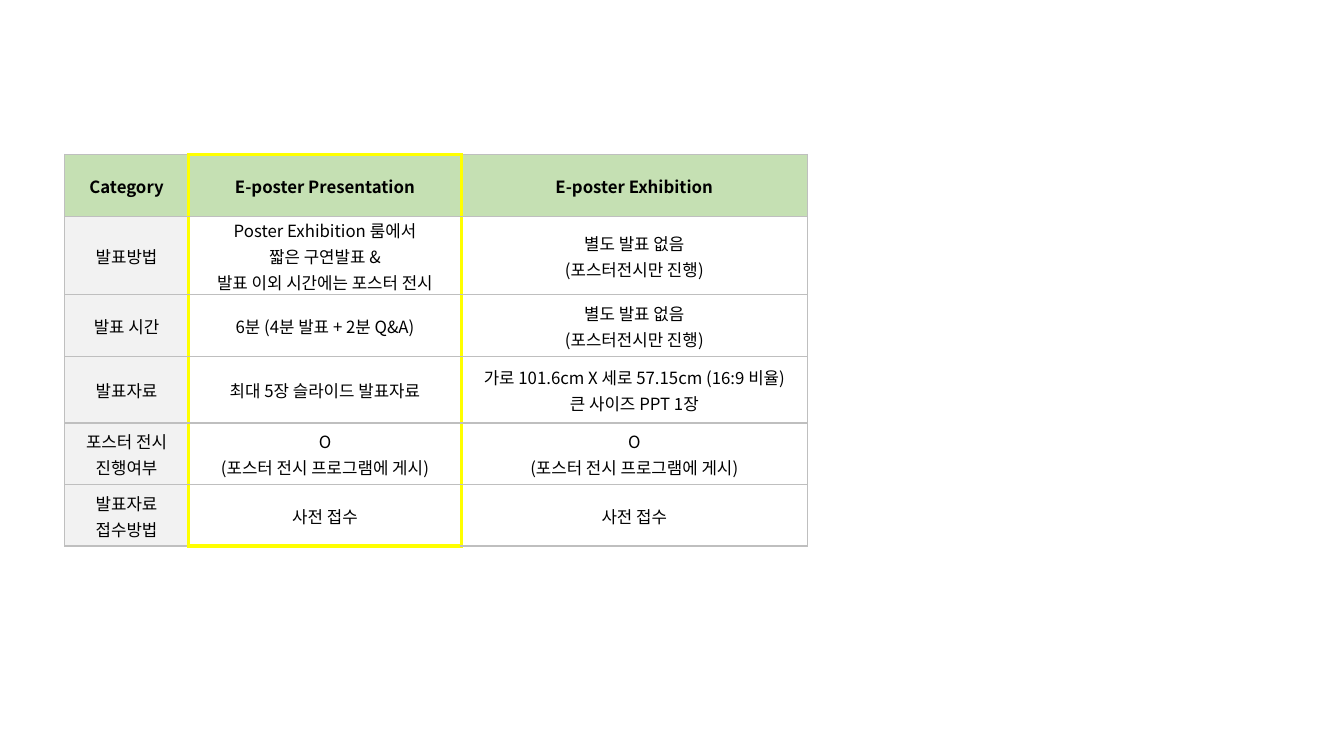
import pptx
import pptx.dml.color
import pptx.enum.text
import pptx.oxml
import pptx.oxml.ns
import pptx.util
from pptx.util import Cm

ROWS = [
    ("Category", "E-poster Presentation", "E-poster Exhibition"),
    ("발표방법",
     "Poster Exhibition 룸에서\n짧은 구연발표 &\n발표 이외 시간에는 포스터 전시",
     "별도 발표 없음\n(포스터전시만 진행)"),
    ("발표 시간", "6분 (4분 발표 + 2분 Q&A)", "별도 발표 없음\n(포스터전시만 진행)"),
    ("발표자료", "최대 5장 슬라이드 발표자료",
     "가로 101.6cm X 세로 57.15cm (16:9 비율)\n큰 사이즈 PPT 1장"),
    ("포스터 전시\n진행여부", "O\n(포스터 전시 프로그램에 게시)",
     "O\n(포스터 전시 프로그램에 게시)"),
    ("발표자료\n접수방법", "사전 접수", "사전 접수"),
]
COLUMN_WIDTHS = [3.12, 6.88, 8.71]
ROW_HEIGHTS = [1.57, 1.7, 1.55, 1.68, 1.55, 1.55]
LEFT, TOP = 1.63, 3.89
FONT = "Noto Sans CJK KR"
GREEN, GREY, WHITE, BLACK = "C5E0B3", "F2F2F2", "FFFFFF", "000000"
GRID = ("BFBFBF", 1)
HIGHLIGHT = ("FFFF00", 3)
HIGHLIGHT_COLUMN = 1


def color(value):
    return pptx.dml.color.RGBColor.from_string(value)


def cell_borders(row, column):
    """Grid lines everywhere, with a thick frame around the highlighted column."""
    inside = column == HIGHLIGHT_COLUMN
    framed = {
        "lnL": inside or column == HIGHLIGHT_COLUMN + 1,
        "lnR": inside or column == HIGHLIGHT_COLUMN - 1,
        "lnT": inside and row == 0,
        "lnB": inside and row == len(ROWS) - 1,
    }
    return {side: HIGHLIGHT if thick else GRID for side, thick in framed.items()}


def draw_borders(cell, borders):
    properties = cell._tc.get_or_add_tcPr()
    for position, (side, (line_color, width)) in enumerate(borders.items()):
        properties.insert(position, pptx.oxml.parse_xml(
            f'<a:{side} {pptx.oxml.ns.nsdecls("a")} w="{pptx.util.Pt(width)}">'
            f'<a:solidFill><a:srgbClr val="{line_color}"/></a:solidFill>'
            f'<a:prstDash val="solid"/></a:{side}>'))


def write_text(cell, text, bold):
    cell.text = text
    for paragraph in cell.text_frame.paragraphs:
        paragraph.alignment = pptx.enum.text.PP_ALIGN.CENTER
        paragraph.line_spacing = 1.07
        for run in paragraph.runs:
            font_format = {"name": FONT, "size": pptx.util.Pt(12), "bold": bold}
            for name, value in font_format.items():
                setattr(run.font, name, value)
            run.font.color.rgb = color(BLACK)
            # Korean letters take the East Asian font
            run.font._element.append(pptx.oxml.parse_xml(
                f'<a:ea {pptx.oxml.ns.nsdecls("a")} typeface="{FONT}"/>'))


def format_cell(cell, row, column):
    side_margin = Cm(0.18 if column == 0 else 0)
    cell_format = {
        "margin_left": side_margin, "margin_right": side_margin,
        "margin_top": 0, "margin_bottom": 0,
        "vertical_anchor": pptx.enum.text.MSO_ANCHOR.MIDDLE,
    }
    for name, value in cell_format.items():
        setattr(cell, name, value)
    cell.fill.solid()
    fill = GREEN if row == 0 else GREY if column == 0 else WHITE
    cell.fill.fore_color.rgb = color(fill)
    draw_borders(cell, cell_borders(row, column))


def main():
    presentation = pptx.Presentation()
    presentation.slide_width = Cm(33.87)
    presentation.slide_height = Cm(19.05)
    slide = presentation.slides.add_slide(presentation.slide_layouts[6])

    # Comparison table
    table = slide.shapes.add_table(
        len(ROWS), len(COLUMN_WIDTHS), Cm(LEFT), Cm(TOP),
        Cm(sum(COLUMN_WIDTHS)), Cm(sum(ROW_HEIGHTS))).table
    for column, width in zip(table.columns, COLUMN_WIDTHS):
        column.width = Cm(width)
    for row, height in zip(table.rows, ROW_HEIGHTS):
        row.height = Cm(height)

    # Cell contents
    for row, texts in enumerate(ROWS):
        for column, text in enumerate(texts):
            cell = table.cell(row, column)
            write_text(cell, text, bold=row == 0)
            format_cell(cell, row, column)

    presentation.save("out.pptx")


if __name__ == "__main__":
    main()
